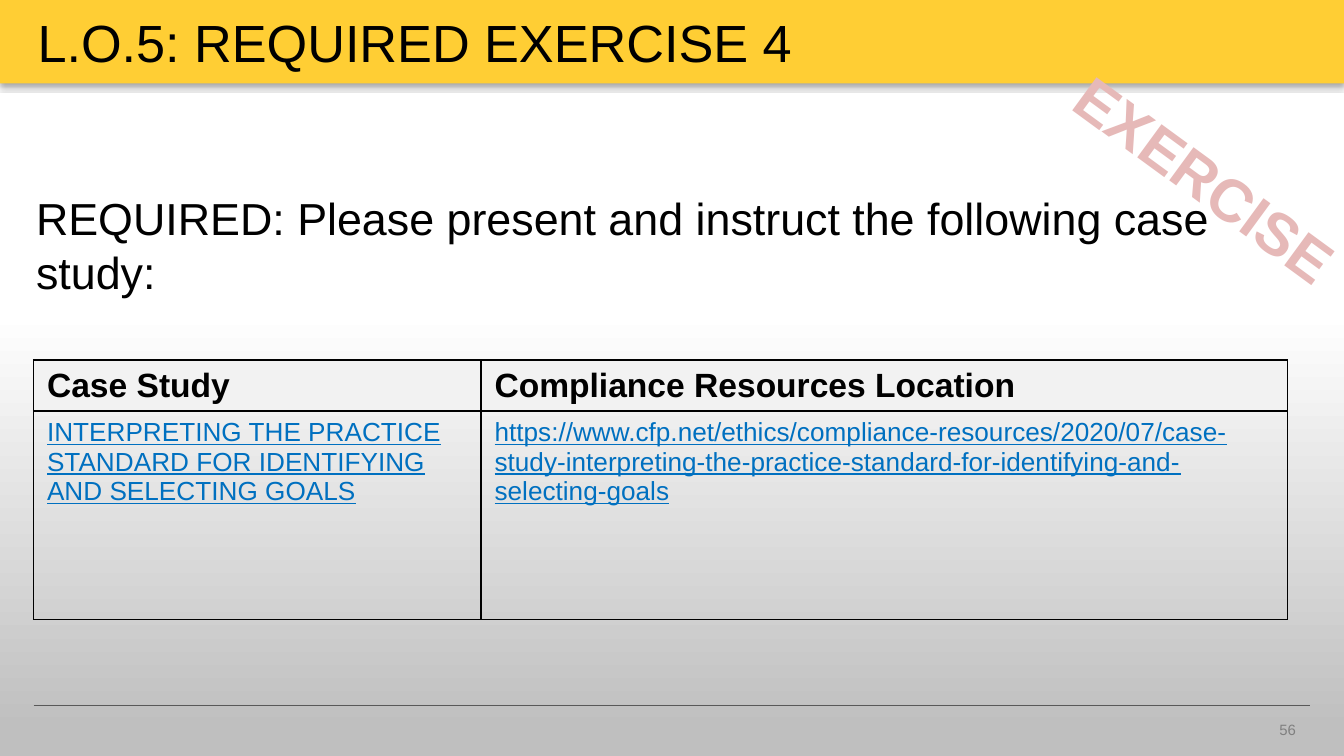
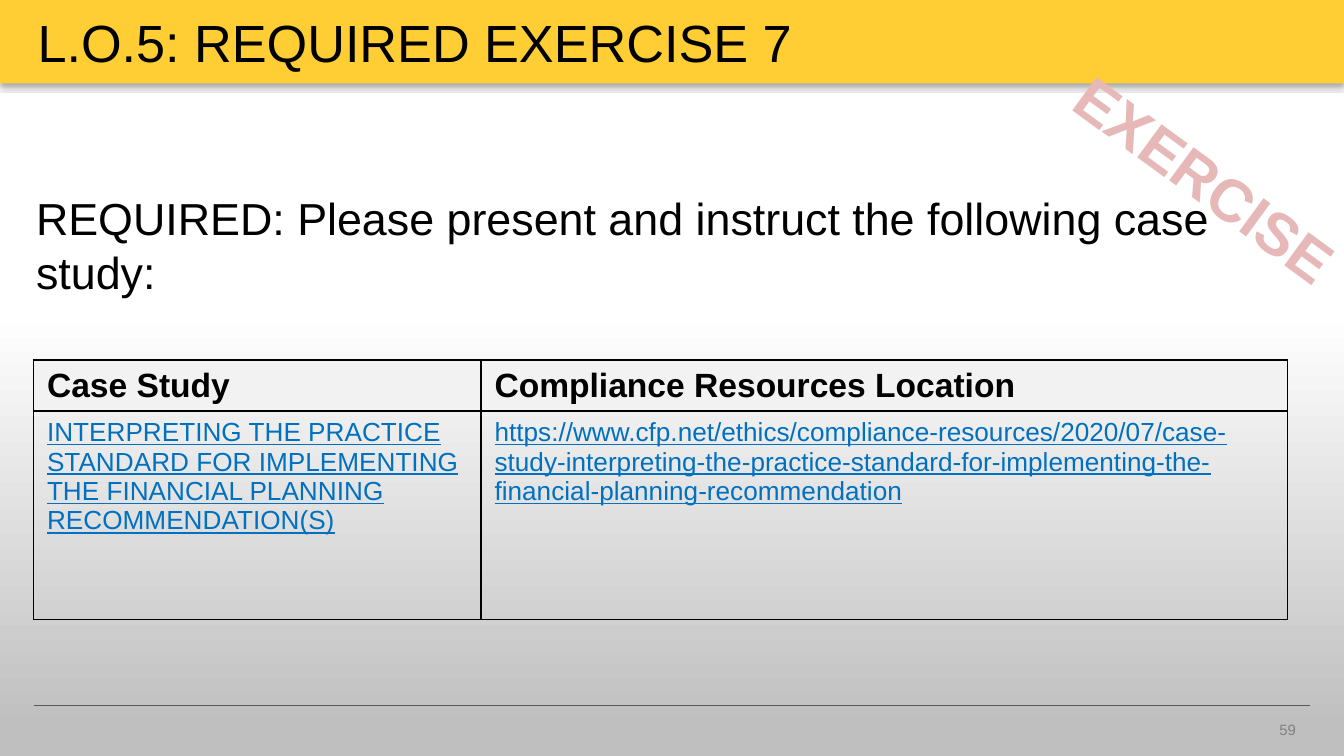
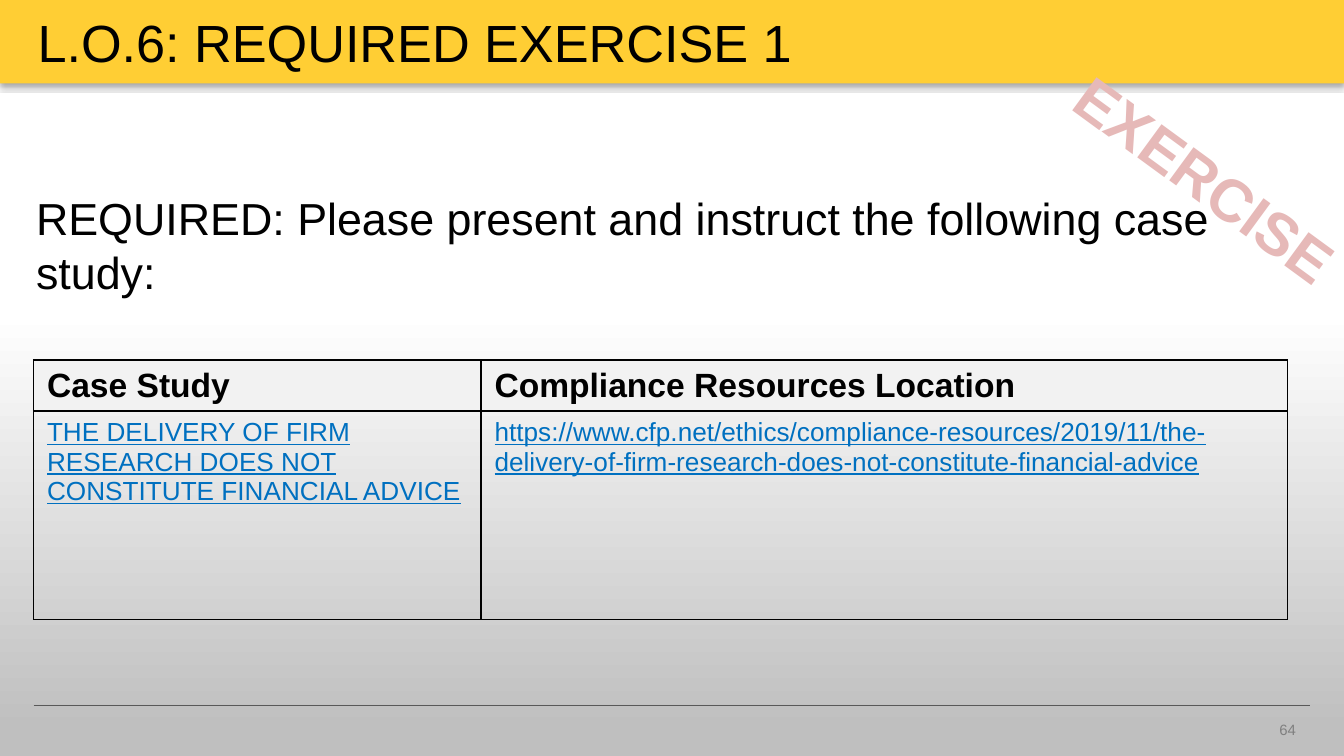
from lxml import etree
from pptx import Presentation
from pptx.dml.color import RGBColor
from pptx.enum.shapes import MSO_CONNECTOR as Link, MSO_SHAPE as Form
from pptx.enum.text import MSO_ANCHOR as Anchor, MSO_AUTO_SIZE as Fit, PP_ALIGN as Align
from pptx.oxml import parse_xml
from pptx.oxml.ns import nsdecls, qn
from pptx.util import Inches, Pt

HUES = {
    "black": "000000",
    "gold": "FFCE34",
    "silver": "BFBFBF",
    "white": "FFFFFF",
    "rule": "595959",
    "stamp": "E6B9B8",
    "head": "F2F2F2",
    "link": "0070C0",
    "page": "808080",
}
FONT = "Arial"
PROMPT = "REQUIRED: Please present and instruct the following case study:"
HEADS = ("Case Study", "Compliance Resources Location")
COLS = (3.33, 6)
ROWS = (0.38, 1.55)
SITE = "https://www.cfp.net/ethics/compliance-resources/"
CASES = [
    ("L.O.5: REQUIRED EXERCISE 4", "56",
     "INTERPRETING THE PRACTICE STANDARD FOR IDENTIFYING AND SELECTING GOALS",
     "2020/07/case-study-interpreting-the-practice-standard-"
     "for-identifying-and-selecting-goals"),
    ("L.O.5: REQUIRED EXERCISE 7", "59",
     "INTERPRETING THE PRACTICE STANDARD FOR IMPLEMENTING THE FINANCIAL "
     "PLANNING RECOMMENDATION(S)",
     "2020/07/case-study-interpreting-the-practice-standard-"
     "for-implementing-the-financial-planning-recommendation"),
    ("L.O.6: REQUIRED EXERCISE 1", "64",
     "THE DELIVERY OF FIRM RESEARCH DOES NOT CONSTITUTE FINANCIAL ADVICE",
     "2019/11/the-delivery-of-firm-research-does-not-constitute-financial-advice"),
]


def rgb(name):
    return RGBColor.from_string(HUES[name])


def write(frame, text, size, hue="black", bold=False, line=False, align=Align.LEFT):
    """Fill a text frame with one paragraph."""
    frame.text = text
    para = frame.paragraphs[0]
    para.alignment = align
    font = para.font
    font.name, font.size, font.bold, font.underline = FONT, Pt(size), bold, line
    font.color.rgb = rgb(hue)


def add_text(slide, box, *args, wrap=True, **style):
    shape = slide.shapes.add_textbox(*map(Inches, box))
    shape.text_frame.word_wrap = wrap
    write(shape.text_frame, *args, **style)
    return shape


def add_panel(slide, top, height):
    """Add a full-width rectangle that casts a soft shadow downward."""
    shape = slide.shapes.add_shape(
        Form.RECTANGLE, 0, Inches(top), Inches(10), Inches(height))
    shape.line.fill.background()
    shape.shadow.inherit = False
    glow = shape._element.spPr.find(qn("a:effectLst"))
    glow.append(parse_xml(
        f'<a:outerShdw {nsdecls("a")} blurRad="{Pt(3.1)}" dist="{Pt(1.8)}" '
        f'dir="5400000" rotWithShape="0"><a:srgbClr val="{HUES["black"]}">'
        '<a:alpha val="35000"/></a:srgbClr></a:outerShdw>'))
    return shape


def add_frame(slide):
    """Add the band, the shaded ground, the foot rule and the stamp."""
    band = add_panel(slide, 0, 0.62)
    band.fill.solid()
    band.fill.fore_color.rgb = rgb("gold")

    ground = add_panel(slide, 0.69, 4.94).fill
    ground.gradient()
    ground.gradient_angle = 90
    for stop, hue, place in zip(ground.gradient_stops, ("silver", "white"), (0.04, 0.67)):
        stop.color.rgb = rgb(hue)
        stop.position = place

    rule = slide.shapes.add_connector(
        Link.STRAIGHT, *map(Inches, (0.25, 5.25, 9.75, 5.25)))
    rule.line.color.rgb = rgb("rule")
    rule.line.width = Pt(0.75)
    etree.SubElement(rule._element.spPr, qn("a:effectLst"))

    stamp = add_text(slide, (7.68, 1.01, 2.58, 0.64), "EXERCISE", 32, "stamp",
                     bold=True, align=Align.CENTER, wrap=False)
    stamp.rotation = 36.2


def set_title(slide, text):
    title = slide.shapes.title
    title.left, title.top, title.width, title.height = map(Inches, (0.18, 0, 7.56, 0.62))
    frame = title.text_frame
    frame.auto_size = Fit.NONE
    frame.vertical_anchor = Anchor.MIDDLE
    write(frame, text, 28)
    slide.shapes._spTree.append(title._element)  # bring in front of the band


def add_prompt(slide):
    shape = add_text(slide, (0.17, 0.9, 9, 4), PROMPT, 24)
    shape.text_frame.margin_top = Inches(0.52)


def add_edges(cell):
    for side in "LRTB":
        cell._tc.get_or_add_tcPr().append(parse_xml(
            f'<a:ln{side} {nsdecls("a")} w="{Pt(1)}"><a:solidFill>'
            f'<a:srgbClr val="{HUES["black"]}"/></a:solidFill></a:ln{side}>'))


def add_grid(slide, case, link):
    grid = slide.shapes.add_table(
        len(ROWS), len(COLS), Inches(0.25), Inches(2.68),
        Inches(sum(COLS)), Inches(sum(ROWS))).table
    grid.first_row = grid.horz_banding = False
    for col, width in zip(grid.columns, COLS):
        col.width = Inches(width)
    for row, height in zip(grid.rows, ROWS):
        row.height = Inches(height)
    for cell in grid.iter_cells():
        add_edges(cell)
    for cell, text in zip(grid.rows[0].cells, HEADS):
        cell.fill.solid()
        cell.fill.fore_color.rgb = rgb("head")
        cell.margin_bottom = Inches(0.03)
        write(cell.text_frame, text, 18, bold=True)
    for cell, text in zip(grid.rows[1].cells, (case, link)):
        cell.fill.background()
        write(cell.text_frame, text, 14, "link", line=True)


def main():
    deck = Presentation()
    deck.slide_width = Inches(10)
    deck.slide_height = deck.slide_width * 9 // 16
    for title, page, case, tail in CASES:
        slide = deck.slides.add_slide(deck.slide_layouts[5])
        add_frame(slide)
        set_title(slide, title)
        add_prompt(slide)
        add_grid(slide, case, SITE + tail)
        add_text(slide, (9.42, 5.31, 0.58, 0.3), page, 8, "page")
    deck.save("out.pptx")


if __name__ == "__main__":
    main()
